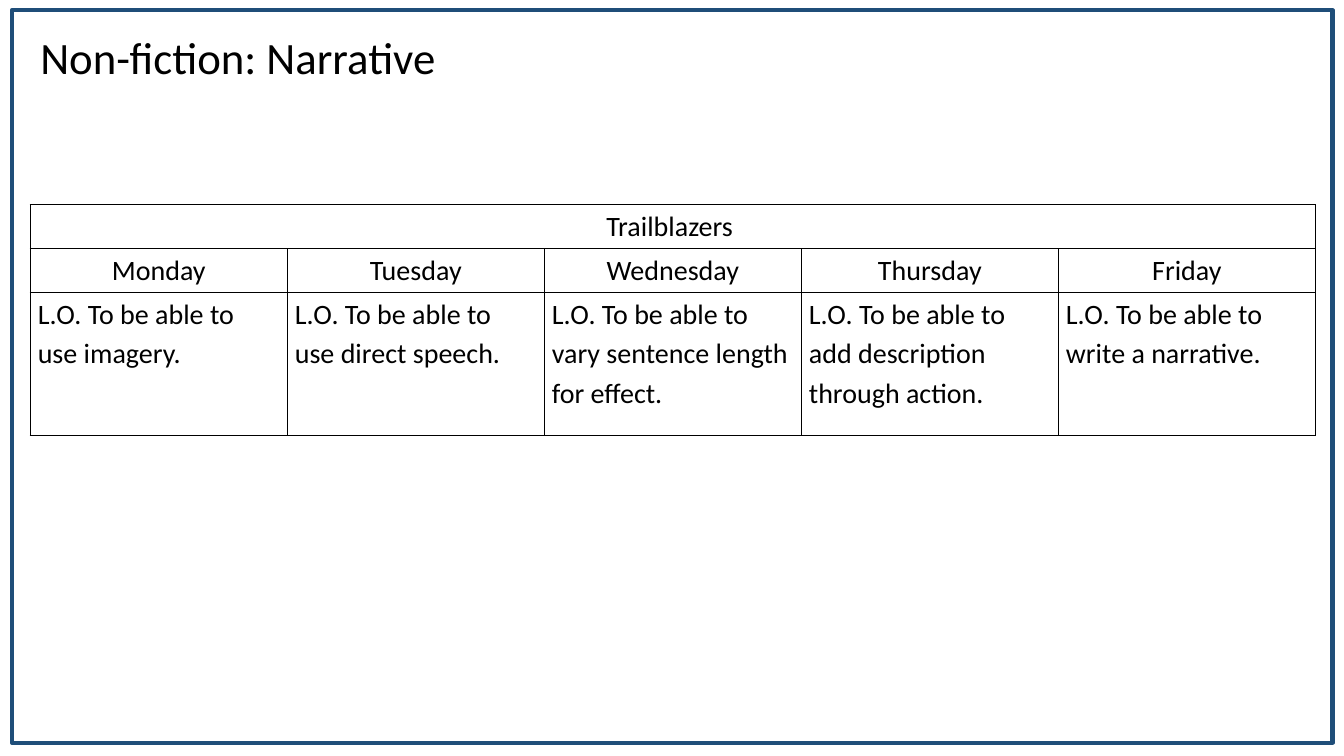
from lxml.etree import SubElement
from pptx import Presentation
from pptx.dml.color import RGBColor
from pptx.enum.shapes import MSO_SHAPE as SHAPE
from pptx.enum.text import MSO_ANCHOR as ANCHOR, MSO_AUTO_SIZE as FIT, PP_ALIGN as ALIGN
from pptx.oxml.ns import qn
from pptx.util import Pt

COLORS = {"frame": "1F4E79", "text": "000000", "grid": "000000"}
DAYS = ["Monday", "Tuesday", "Wednesday", "Thursday", "Friday"]
SKILLS = ["use imagery", "use direct speech", "vary sentence length for effect",
          "add description through action", "write a narrative"]


def write(tf, text, size=20, align=ALIGN.LEFT, spacing=None):
    """Write one formatted paragraph into a text frame."""
    p = tf.paragraphs[0]
    p.alignment = align
    p.line_spacing = spacing
    r = p.add_run()
    r.text = text
    r.font.name = "Calibri"
    r.font.size = Pt(size)
    r.font.bold = False
    r.font.color.rgb = RGBColor.from_string(COLORS["text"])


class WeekSlide:
    """Hold the slide and the style of the weekly plan."""

    def __init__(self, prs):
        self.s = prs.slides.add_slide(prs.slide_layouts[5])

    def title(self, text, left, top, width, height):
        """Place and format the title."""
        sp = self.s.shapes.title
        sp.left, sp.top, sp.width, sp.height = map(Pt, (left, top, width, height))
        tf = sp.text_frame
        tf.word_wrap = True
        tf.auto_size = FIT.SHAPE_TO_FIT_TEXT
        tf.vertical_anchor = ANCHOR.TOP
        write(tf, text, size=32)

    def frame(self, left, top, width, height):
        """Draw the outline around the slide."""
        sp = self.s.shapes.add_shape(SHAPE.RECTANGLE, *map(Pt, (left, top, width, height)))
        sp.shadow.inherit = False
        sp.fill.background()
        sp.line.color.rgb = RGBColor.from_string(COLORS["frame"])
        sp.line.width = Pt(3)

    def border(self, cell):
        """Give a cell thin lines on all sides and no fill."""
        tcPr = cell._tc.get_or_add_tcPr()
        for side in ("lnL", "lnR", "lnT", "lnB"):
            ln = SubElement(tcPr, qn(f"a:{side}"), w=str(Pt(1)))
            fill = SubElement(ln, qn("a:solidFill"))
            SubElement(fill, qn("a:srgbClr"), val=COLORS["grid"])
        cell.fill.background()

    def plan(self, heading, days, goals, left, top, width, heights):
        """Build the table: merged heading, days, goals."""
        table = self.s.shapes.add_table(
            len(heights), len(days), Pt(left), Pt(top), Pt(width), Pt(sum(heights))).table
        table.first_row = table.horz_banding = False
        for row, height in zip(table.rows, heights):
            row.height = Pt(height)
        for cell in table.iter_cells():
            self.border(cell)
        table.cell(0, 0).merge(table.cell(0, len(days) - 1))
        write(table.cell(0, 0).text_frame, heading, align=ALIGN.CENTER)
        for i, (day, goal) in enumerate(zip(days, goals)):
            write(table.cell(1, i).text_frame, day, align=ALIGN.CENTER)
            cell = table.cell(2, i)
            cell.margin_left = cell.margin_right = Pt(5.4)
            cell.margin_top = cell.margin_bottom = Pt(0)
            write(cell.text_frame, goal, spacing=1.15)


def main():
    """Build and save the weekly plan slide."""
    prs = Presentation()
    prs.slide_width, prs.slide_height = Pt(960), Pt(540)
    week = WeekSlide(prs)
    week.frame(8.6, 7.2, 943.2, 523.4)
    week.title("Non-fiction: Narrative", 21.6, 17.3, 795, 46)
    week.plan("Trailblazers ", DAYS, [f"L.O. To be able to {skill}." for skill in SKILLS],
              21.6, 146.2, 918, (31.4, 31.4, 102.2))
    prs.save("out.pptx")


if __name__ == "__main__":
    main()
